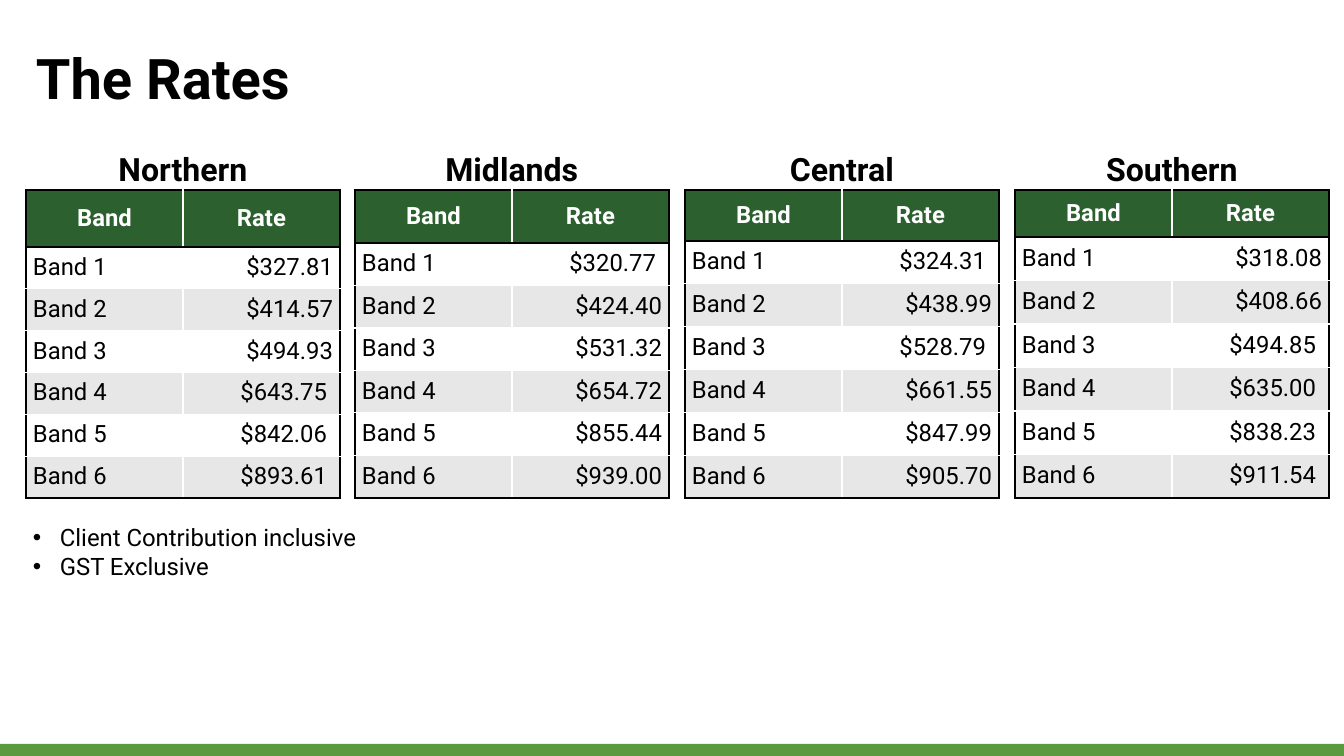
from lxml import etree
from pptx import Presentation
from pptx.dml.color import RGBColor
from pptx.enum.shapes import MSO_SHAPE
from pptx.enum.text import MSO_ANCHOR, PP_ALIGN
from pptx.oxml.ns import qn
from pptx.util import Pt

BLACK = RGBColor(0x00, 0x00, 0x00)
WHITE = RGBColor(0xFF, 0xFF, 0xFF)
GREY = RGBColor(0xE7, 0xE7, 0xE7)
DARK_GREEN = RGBColor(0x2C, 0x60, 0x2F)
GREEN = RGBColor(0x5C, 0x9A, 0x42)

SLIDE_W, SLIDE_H = 1344, 756
LEFT, TABLE_TOP, TABLE_W, TABLE_H = 26, 190, 314, 308
LAST_OFFSET = 989

# Region, header height and the rates of bands 1 to 6
REGIONS = [
    ("Northern", 57, ["$327.81", "$414.57", "$494.93", "$643.75 ", "$842.06 ", "$893.61 "]),
    ("Midlands", 53, ["$320.77 ", "$424.40", "$531.32", "$654.72", "$855.44", "$939.00"]),
    ("Central", 51, ["$324.31 ", "$438.99", "$528.79 ", "$661.55", "$847.99", "$905.70"]),
    ("Southern", 47, ["$318.08", "$408.66", "$494.85 ", "$635.00 ", "$838.23 ", "$911.54 "]),
]


def px(n):
    return round(n * 914400 / 100.8)


class SlideBuilder:
    font = "Roboto"

    def __init__(self, prs):
        self.slide = prs.slides.add_slide(prs.slide_layouts[6])

    def run(self, p, text, size, color=BLACK, bold=False):
        r = p.add_run()
        r.text = text
        r.font.name = self.font
        r.font.size = Pt(size)
        r.font.bold = bold
        r.font.color.rgb = color

    def bar(self, x, y, w, h, color):
        sp = self.slide.shapes.add_shape(MSO_SHAPE.RECTANGLE, px(x), px(y), px(w), px(h))
        sp.shadow.inherit = False
        sp.fill.solid()
        sp.fill.fore_color.rgb = color
        sp.line.fill.background()

    def text_frame(self, x, y, w, h, inset_x=10, inset_y=5):
        tf = self.slide.shapes.add_textbox(px(x), px(y), px(w), px(h)).text_frame
        tf.word_wrap = True
        tf.margin_left = tf.margin_right = px(inset_x)
        tf.margin_top = tf.margin_bottom = px(inset_y)
        return tf

    def text(self, x, y, w, h, text, size, align=PP_ALIGN.LEFT, anchor=MSO_ANCHOR.TOP):
        tf = self.text_frame(x, y, w, h)
        tf.vertical_anchor = anchor
        p = tf.paragraphs[0]
        p.alignment = align
        self.run(p, text, size, bold=True)

    def bullets(self, x, y, w, h, items, size, indent):
        tf = self.text_frame(x, y, w, h, 7, 4)
        for i, item in enumerate(items):
            p = tf.add_paragraph() if i else tf.paragraphs[0]
            pPr = p._p.get_or_add_pPr()
            pPr.set("marL", str(px(indent)))
            pPr.set("indent", str(-px(indent)))
            etree.SubElement(pPr, qn("a:buFont")).set("typeface", "Arial")
            etree.SubElement(pPr, qn("a:buChar")).set("char", "•")
            self.run(p, item, size)

    def border(self, cell, side, outer):
        """Draw one cell side: black on the frame and header, else white."""
        tcPr = cell._tc.get_or_add_tcPr()
        ln = etree.SubElement(tcPr, qn(f"a:ln{side}"), w=str(Pt(1.57 if outer else 1)))
        fill = etree.SubElement(ln, qn("a:solidFill"))
        etree.SubElement(fill, qn("a:srgbClr"), val=str(BLACK if outer else WHITE))

    def cell(self, cell, text, align, fill, color, bold, outer_sides):
        # Borders go before the fill in the cell properties
        for side in "LRTB":
            self.border(cell, side, side in outer_sides)
        cell.fill.solid()
        cell.fill.fore_color.rgb = fill
        cell.vertical_anchor = MSO_ANCHOR.MIDDLE
        cell.margin_left = cell.margin_right = px(7)
        cell.margin_top, cell.margin_bottom = px(17), px(4)
        p = cell.text_frame.paragraphs[0]
        p.alignment = align
        p.line_spacing = Pt(9.8)
        self.run(p, text, 17, color, bold)

    def rate_table(self, x, y, w, h, header_h, rates):
        rows = [("Band", "Rate")]
        rows += [(f"Band {n}", rate) for n, rate in enumerate(rates, 1)]
        last = len(rows) - 1
        table = self.slide.shapes.add_table(len(rows), 2, px(x), px(y), px(w), px(h)).table
        for i, row in enumerate(rows):
            header = i == 0
            table.rows[i].height = px(header_h) if header else px((h - header_h) / last)
            fill = DARK_GREEN if header else (GREY, WHITE)[i % 2]
            across = ("T" if i < 2 else "") + ("B" if i in (0, last) else "")
            for j, text in enumerate(row):
                align = PP_ALIGN.CENTER if header else (PP_ALIGN.LEFT, PP_ALIGN.RIGHT)[j]
                self.cell(table.cell(i, j), text, align, fill,
                          WHITE if header else BLACK, header, across + "LR"[j])


def main():
    prs = Presentation()
    prs.slide_width, prs.slide_height = px(SLIDE_W), px(SLIDE_H)
    s = SlideBuilder(prs)
    s.bar(0, 744, SLIDE_W, 12, GREEN)
    s.text(LEFT, 41, 1292, 72, "The Rates", 40, anchor=MSO_ANCHOR.MIDDLE)
    for i, (region, header_h, rates) in enumerate(REGIONS):
        x = LEFT + i * LAST_OFFSET // (len(REGIONS) - 1)
        s.text(x, 144, TABLE_W, 49, region, 22.9, PP_ALIGN.CENTER)
        s.rate_table(x, TABLE_TOP, TABLE_W, TABLE_H, header_h, rates)
    s.bullets(LEFT, 519, 454, 66, ["Client Contribution inclusive", "GST Exclusive"], 17.1, 27)
    prs.save("out.pptx")


if __name__ == "__main__":
    main()
